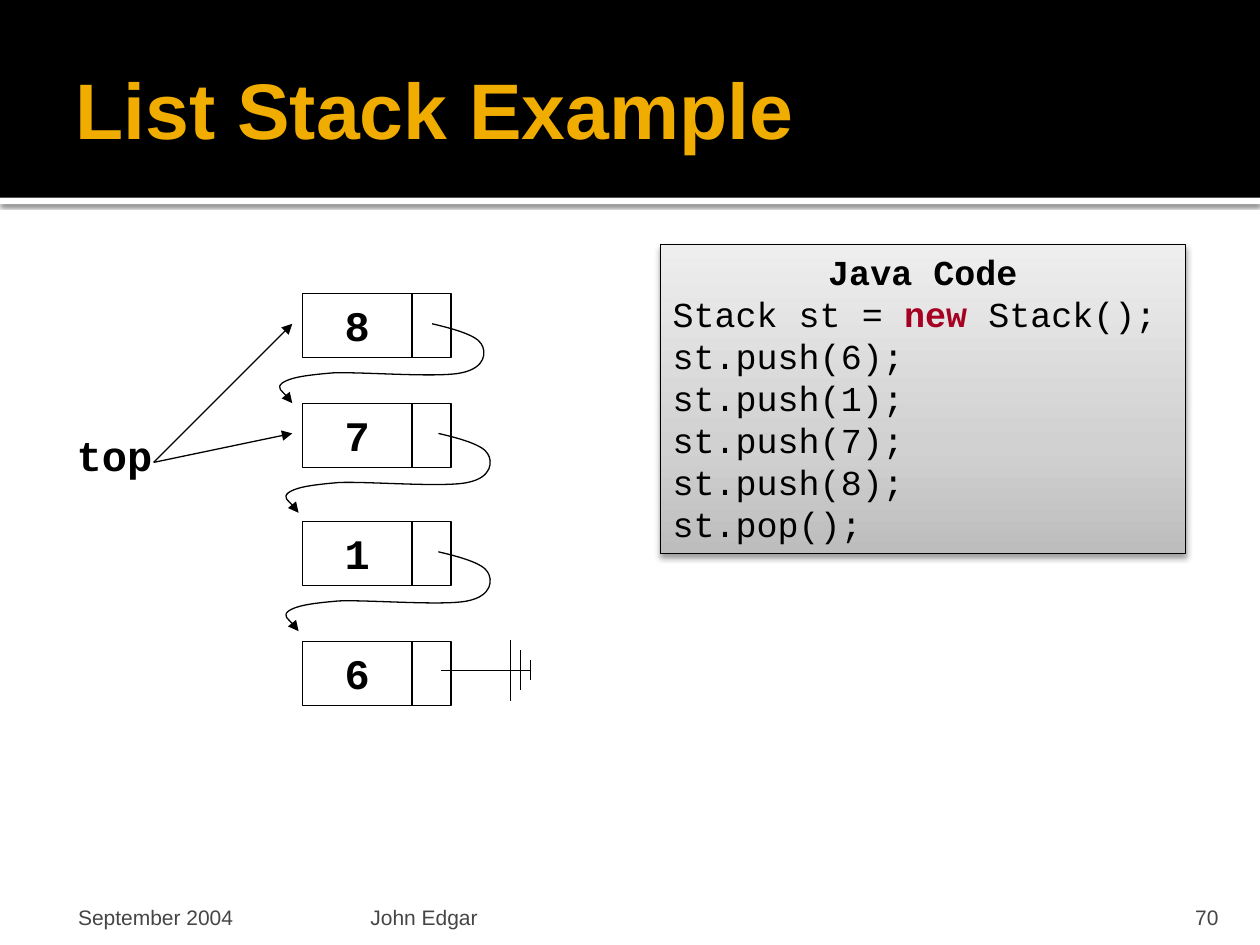
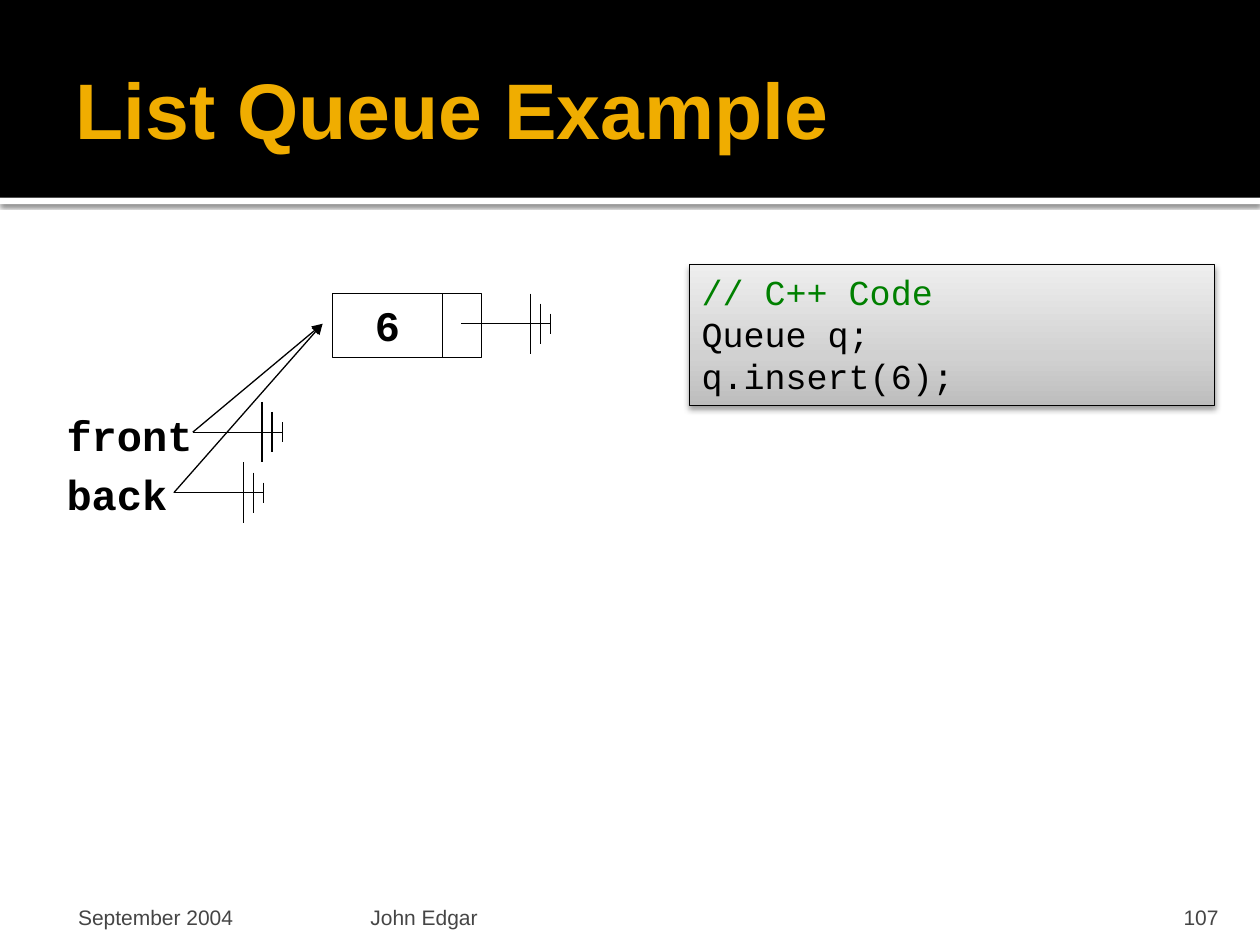
from dataclasses import dataclass
from typing import Any, Optional

from lxml.etree import SubElement
from pptx import Presentation
from pptx.dml.color import RGBColor
from pptx.enum.shapes import MSO_CONNECTOR, MSO_SHAPE
from pptx.enum.text import MSO_ANCHOR, MSO_AUTO_SIZE, PP_ALIGN
from pptx.oxml.ns import qn
from pptx.util import Inches, Pt

BLACK, WHITE, GOLD, GREY = "000000", "FFFFFF", "F0AD00", "454545"
KEYWORD, COMMENT = "A50021", "008000"
SANS, MONO = "Arial", "Courier New"
GRADIENT = ((0, "BDBDBD"), (35, "D1D1D1"), (100, "EEEEEE"))
INSETS = (0.1, 0.05, 0.1, 0.05)
VALUE_WIDTH, POINTER_WIDTH, NODE_HEIGHT = 0.87, 0.31, 0.51
GROUND_LENGTH = 0.71
GROUND_BARS = ((0.55, 0.24), (0.63, 0.16), (0.71, 0.08))
LINK_CURVE = (
    (0.17, 0.04), (0.35, 0.09), (0.39, 0.16),
    (0.43, 0.22), (0.43, 0.35), (0.23, 0.39),
    (0.04, 0.43), (-0.56, 0.38), (-0.79, 0.39),
    (-1.03, 0.41), (-1.13, 0.43), (-1.19, 0.47),
    (-1.24, 0.51), (-1.12, 0.6), (-1.11, 0.63),
)


@dataclass(frozen=True)
class Span:
    text: str
    color: str = BLACK
    bold: bool = False


@dataclass(frozen=True)
class Line:
    spans: tuple[Span, ...]
    align: PP_ALIGN = PP_ALIGN.LEFT


@dataclass(frozen=True)
class Shadow:
    opacity: int
    blur: float
    distance: float


@dataclass(frozen=True)
class Footer:
    left: float
    width: float
    left_inset: float
    right_inset: float
    align: PP_ALIGN = PP_ALIGN.LEFT


@dataclass(frozen=True)
class Node:
    value: str
    left: float
    top: float


BAND_SHADOW = Shadow(60, 2.5, 0.8)
CODE_SHADOW = Shadow(38, 3.5, 2)
DATE_FOOTER = Footer(0.5, 2.33, 0.12, 0.05)
AUTHOR_FOOTER = Footer(2.89, 6.02, 0.05, 0.05)
NUMBER_FOOTER = Footer(8.97, 0.8, 0.1, 0.1, PP_ALIGN.RIGHT)


def rgb(color: str) -> RGBColor:
    return RGBColor.from_string(color)


def add_span(para: Any, text: str, *, size: float, font: str = SANS,
             color: str = BLACK, bold: bool = False) -> None:
    span = para.add_run()
    span.text = text
    span.font.size = Pt(size)
    span.font.name = font
    span.font.bold = bold
    span.font.color.rgb = rgb(color)


def set_frame(frame: Any, anchor: MSO_ANCHOR = MSO_ANCHOR.TOP,
              insets: tuple[float, ...] = INSETS) -> None:
    frame.word_wrap = True
    frame.auto_size = MSO_AUTO_SIZE.NONE
    frame.vertical_anchor = anchor
    (frame.margin_left, frame.margin_top,
     frame.margin_right, frame.margin_bottom) = map(Inches, insets)


def add_text(page: Any, text: str, left: float, top: float, width: float, height: float, *,
             anchor: MSO_ANCHOR = MSO_ANCHOR.TOP, insets: tuple[float, ...] = INSETS,
             align: PP_ALIGN = PP_ALIGN.LEFT, **style: Any) -> None:
    box = page.shapes.add_textbox(*map(Inches, (left, top, width, height)))
    set_frame(box.text_frame, anchor, insets)
    para = box.text_frame.paragraphs[0]
    para.alignment = align
    add_span(para, text, **style)


def add_box(shapes: Any, left: float, top: float, width: float, height: float, *,
            fill: Optional[str] = None, line: Optional[float] = None) -> Any:
    box = shapes.add_shape(MSO_SHAPE.RECTANGLE, *map(Inches, (left, top, width, height)))
    box.shadow.inherit = False
    if fill:
        box.fill.solid()
        box.fill.fore_color.rgb = rgb(fill)
    else:
        box.fill.background()
    if line:
        set_line(box, line)
    else:
        box.line.fill.background()
    return box


def set_line(shape: Any, width: float = 0.75, arrow: bool = False) -> None:
    shape.line.width = Pt(width)
    shape.line.color.rgb = rgb(BLACK)
    if arrow:
        SubElement(shape.line._get_or_add_ln(), qn("a:tailEnd"), type="triangle")


def cast_shadow(box: Any, shadow: Shadow) -> None:
    effects = box.element.spPr.find(qn("a:effectLst"))
    outer = SubElement(effects, qn("a:outerShdw"), blurRad=str(Pt(shadow.blur)),
                       dist=str(Pt(shadow.distance)), dir="5400000", rotWithShape="0")
    color = SubElement(outer, qn("a:srgbClr"), val=BLACK)
    SubElement(color, qn("a:alpha"), val=str(shadow.opacity * 1000))


def fill_gradient(box: Any) -> None:
    box.fill.gradient()
    box.fill.gradient_angle = 90
    stops = next(box.element.spPr.iter(qn("a:gsLst")))
    for stop in list(stops):
        stops.remove(stop)
    for position, color in GRADIENT:
        stop = SubElement(stops, qn("a:gs"), pos=str(position * 1000))
        SubElement(stop, qn("a:srgbClr"), val=color)


def add_line(shapes: Any, start: tuple[float, float], end: tuple[float, float],
             arrow: bool = False) -> None:
    connector = shapes.add_connector(MSO_CONNECTOR.STRAIGHT, *map(Inches, start + end))
    set_line(connector, arrow=arrow)
    SubElement(connector.element.spPr, qn("a:effectLst"))


def add_link(page: Any, left: float, top: float) -> None:
    points = [(Inches(left + dx), Inches(top + dy)) for dx, dy in LINK_CURVE]
    builder = page.shapes.build_freeform(Inches(left), Inches(top))
    builder.add_line_segments(points, close=False)
    link = builder.convert_to_shape()
    link.shadow.inherit = False
    link.fill.background()
    set_line(link, arrow=True)
    outline = next(link.element.iter(qn("a:path")))
    segments = outline.findall(qn("a:lnTo"))
    for first in range(0, len(segments), 3):
        curve = SubElement(outline, qn("a:cubicBezTo"))
        for segment in segments[first:first + 3]:
            curve.append(segment[0])
            outline.remove(segment)


def add_node(page: Any, node: Node) -> None:
    shapes = page.shapes.add_group_shape().shapes
    value = add_box(shapes, node.left, node.top, VALUE_WIDTH, NODE_HEIGHT, line=0.75)
    add_box(shapes, node.left + VALUE_WIDTH, node.top, POINTER_WIDTH, NODE_HEIGHT, line=0.75)
    set_frame(value.text_frame)
    para = value.text_frame.paragraphs[0]
    para.alignment = PP_ALIGN.CENTER
    add_span(para, node.value, size=24, font=MONO, bold=True)


def add_ground(page: Any, left: float, middle: float) -> None:
    shapes = page.shapes.add_group_shape().shapes
    add_line(shapes, (left, middle), (left + GROUND_LENGTH, middle))
    for offset, half in GROUND_BARS:
        add_line(shapes, (left + offset, middle - half), (left + offset, middle + half))


def add_code(page: Any, left: float, top: float, height: float, lines: list[Line]) -> None:
    box = add_box(page.shapes, left, top, 4.17, height, line=0.5)
    fill_gradient(box)
    cast_shadow(box, CODE_SHADOW)
    frame = box.text_frame
    set_frame(frame)
    for index, line in enumerate(lines):
        para = frame.add_paragraph() if index else frame.paragraphs[0]
        para.alignment = line.align
        for span in line.spans:
            add_span(para, span.text, size=20, font=MONO, color=span.color, bold=span.bold)


def add_label(page: Any, text: str, left: float, top: float, width: float) -> None:
    add_text(page, text, left, top, width, 0.5, size=24, font=MONO, bold=True)


def add_page(deck: Any, heading: str, number: int) -> Any:
    page = deck.slides.add_slide(deck.slide_layouts[5])
    rule = add_box(page.shapes, 0, 1.57, 10, 0.05, fill=WHITE)
    cast_shadow(rule, BAND_SHADOW)
    add_box(page.shapes, 0, 0, 10, 1.57, fill=BLACK)

    title = page.shapes.title
    title.element.getparent().append(title.element)
    title.left, title.top, title.width, title.height = map(Inches, (0.5, 0.17, 9, 1.37))
    set_frame(title.text_frame, MSO_ANCHOR.MIDDLE, (0.1, 0.05, 0.05, 0.05))
    para = title.text_frame.paragraphs[0]
    para.alignment = PP_ALIGN.LEFT
    add_span(para, heading, size=45, color=GOLD, bold=True)

    footers = ((DATE_FOOTER, "September 2004"), (AUTHOR_FOOTER, "John Edgar"),
               (NUMBER_FOOTER, str(number)))
    for footer, text in footers:
        add_text(page, text, footer.left, 7.08, footer.width, 0.3, anchor=MSO_ANCHOR.BOTTOM,
                 insets=(footer.left_inset, 0.05, footer.right_inset, 0),
                 align=footer.align, size=12, color=GREY)
    return page


def build_stack_page(deck: Any) -> None:
    page = add_page(deck, "List Stack Example", 70)
    calls = ("st.push(6);", "st.push(1);", "st.push(7);", "st.push(8);", "st.pop();")
    add_code(page, 5.24, 1.94, 2.45, [
        Line((Span("Java Code", bold=True),), PP_ALIGN.CENTER),
        Line((Span("Stack st = "), Span("new", KEYWORD, True), Span(" Stack();"))),
        *(Line((Span(call),)) for call in calls),
    ])
    add_label(page, "top", 0.51, 3.36, 0.83)
    for value, top in (("6", 5.09), ("1", 4.14), ("7", 3.2), ("8", 2.33)):
        add_node(page, Node(value, 2.4, top))
    for target in (3.44, 2.57):
        add_line(page.shapes, (1.22, 3.67), (2.32, target), arrow=True)
    for left, top in ((3.43, 2.57), (3.48, 3.44), (3.48, 4.38)):
        add_link(page, left, top)
    add_ground(page, 3.5, 5.32)


def build_queue_page(deck: Any) -> None:
    page = add_page(deck, "List Queue Example", 107)
    add_node(page, Node("6", 2.64, 2.33))
    add_ground(page, 3.66, 2.57)
    for label, top, start in (("front", 3.2, (1.53, 3.43)), ("back", 3.67, (1.38, 3.91))):
        add_label(page, label, 0.43, top, 1.34)
        add_line(page.shapes, start, (2.56, 2.57), arrow=True)
        add_ground(page, *start)
    add_code(page, 5.47, 2.1, 1.12, [
        Line((Span("// C++ Code", COMMENT),)),
        Line((Span("Queue q;"),)),
        Line((Span("q.insert(6);"),)),
    ])


def main() -> None:
    deck = Presentation()
    deck.slide_width, deck.slide_height = Inches(10), Inches(7.5)
    build_stack_page(deck)
    build_queue_page(deck)
    deck.save("out.pptx")


if __name__ == "__main__":
    main()
